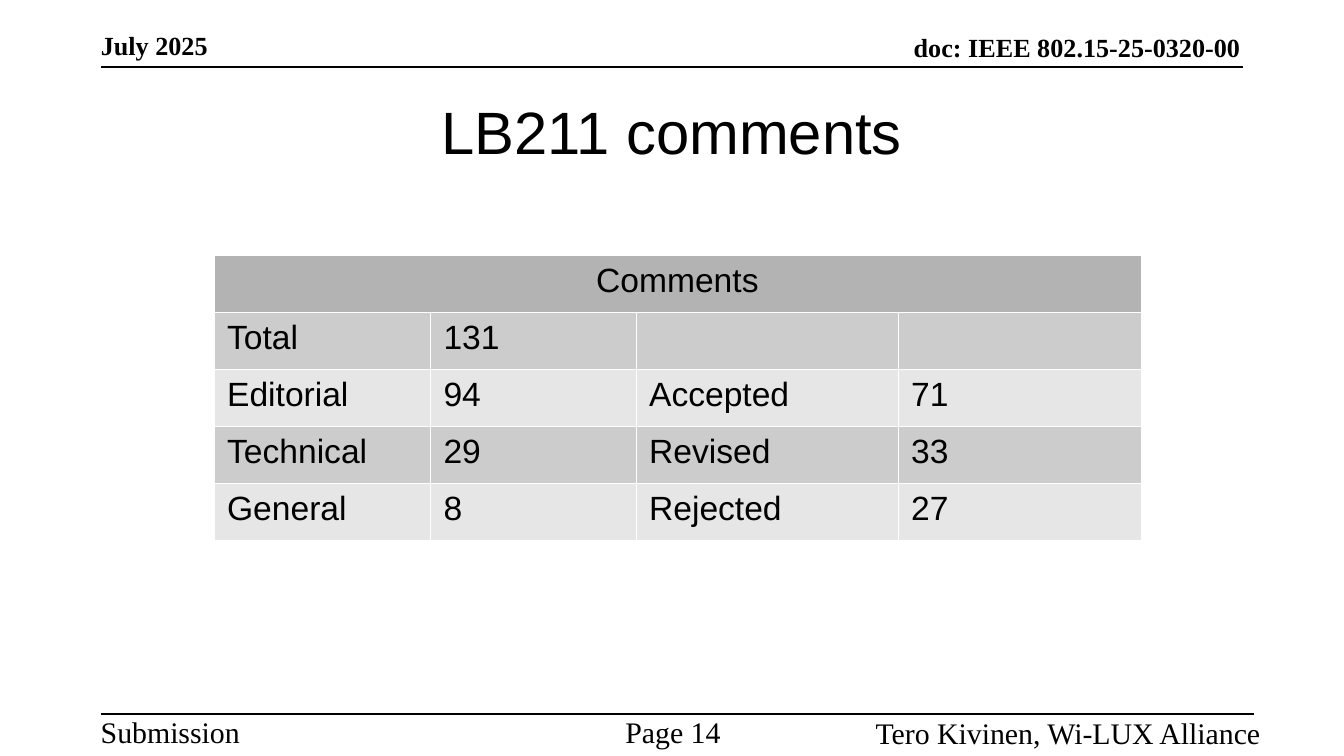
from lxml import etree
from pptx import Presentation
from pptx.dml.color import RGBColor
from pptx.enum.shapes import MSO_CONNECTOR
from pptx.enum.text import MSO_ANCHOR, PP_ALIGN
from pptx.oxml.ns import qn
from pptx.util import Inches, Pt

LEFT, CENTER, RIGHT = PP_ALIGN.LEFT, PP_ALIGN.CENTER, PP_ALIGN.RIGHT
TOP, MIDDLE, BOTTOM = MSO_ANCHOR.TOP, MSO_ANCHOR.MIDDLE, MSO_ANCHOR.BOTTOM
STRAIGHT = MSO_CONNECTOR.STRAIGHT

WIDTH = 10
HEIGHT = WIDTH * 9 / 16
MARGIN = 0.75
HEADER_RULE, FOOTER_RULE = 0.5, 5.31
SERIF, SANS = "Times New Roman", "Arial"
COLORS = {
    "ink": "000000",
    "grid": "FFFFFF",
    "heading": "B3B3B3",
    "odd": "CCCCCC",
    "even": "E6E6E6",
}

COLUMN_WIDTHS = [1.61, 1.53, 1.95, 1.81]
TABLE_HEIGHT = 2.12
COMMENT_ROWS = [
    ["Total", "131", "", ""],
    ["Editorial", "94", "Accepted", "71"],
    ["Technical", "29", "Revised", "33"],
    ["General", "8", "Rejected", "27"],
]


def color(name):
    return RGBColor.from_string(COLORS[name])


def write(frame, text, size, font, align=LEFT, bold=False):
    paragraph = frame.paragraphs[0]
    paragraph.alignment = align
    run = paragraph.add_run()
    run.text = text
    run.font.size = Pt(size)
    run.font.name = font
    run.font.bold = bold
    run.font.color.rgb = color("ink")


def fit_frame(frame, anchor):
    frame.word_wrap = True
    frame.vertical_anchor = anchor
    frame.margin_left = frame.margin_right = 0
    frame.margin_top = frame.margin_bottom = 0


def add_label(slide, text, box, size, align=LEFT, anchor=TOP, bold=False):
    label = slide.shapes.add_textbox(*map(Inches, box))
    fit_frame(label.text_frame, anchor)
    write(label.text_frame, text, size, SERIF, align, bold)


def add_rule(slide, y, right):
    rule = slide.shapes.add_connector(
        STRAIGHT, Inches(MARGIN), Inches(y), Inches(right), Inches(y))
    rule.line.color.rgb = color("ink")
    rule.line.width = Pt(1)
    etree.SubElement(rule._element.spPr, qn("a:effectLst"))


def add_title(slide, text):
    title = slide.shapes.title
    title.left, title.top = Inches(WIDTH * 0.05), Inches(HEADER_RULE)
    title.width, title.height = Inches(WIDTH * 0.9), Inches(0.94)
    fit_frame(title.text_frame, MIDDLE)
    write(title.text_frame, text, 32, SANS, CENTER)


def style_cell(cell, fill):
    # Borders come before the fill in the cell properties
    properties = cell._tc.get_or_add_tcPr()
    for side in ("a:lnL", "a:lnR", "a:lnT", "a:lnB"):
        border = etree.SubElement(properties, qn(side), w=str(Pt(0.06)))
        solid = etree.SubElement(border, qn("a:solidFill"))
        etree.SubElement(solid, qn("a:srgbClr"), val=COLORS["grid"])
    cell.fill.solid()
    cell.fill.fore_color.rgb = color(fill)


def add_comment_table(slide, left, top):
    row_count = len(COMMENT_ROWS) + 1
    table = slide.shapes.add_table(
        row_count, len(COLUMN_WIDTHS), Inches(left), Inches(top),
        Inches(sum(COLUMN_WIDTHS)), Inches(TABLE_HEIGHT)).table
    table.first_row = table.horz_banding = False
    for column, width in zip(table.columns, COLUMN_WIDTHS):
        column.width = Inches(width)

    # Heading across all columns
    heading = table.cell(0, 0)
    heading.merge(table.cell(0, len(COLUMN_WIDTHS) - 1))
    for cell in table.rows[0].cells:
        style_cell(cell, "heading")
    write(heading.text_frame, "Comments", 18, SANS, CENTER)

    # Counts in alternating greys
    for r, values in enumerate(COMMENT_ROWS, start=1):
        for c, value in enumerate(values):
            cell = table.cell(r, c)
            style_cell(cell, "odd" if r % 2 else "even")
            if value:
                write(cell.text_frame, value, 18, SANS)


def main():
    deck = Presentation()
    deck.slide_width, deck.slide_height = Inches(WIDTH), Inches(HEIGHT)
    slide = deck.slides.add_slide(deck.slide_layouts[5])

    # Header
    add_label(slide, "doc: IEEE 802.15-25-0320-00", (3.39, 0.32, 5.84, 0.15),
              14, RIGHT, BOTTOM, bold=True)
    add_label(slide, "July 2025", (MARGIN, 0.3, 2.79, 0.15),
              14, LEFT, BOTTOM, bold=True)
    add_rule(slide, HEADER_RULE, WIDTH - MARGIN)

    # Footer
    add_rule(slide, FOOTER_RULE, 9.33)
    add_label(slide, "Submission", (MARGIN, FOOTER_RULE, 1.87, 0.23), 16)
    add_label(slide, "Page 14 ", (4.1, FOOTER_RULE, 1.87, 0.23), 16, CENTER)
    add_label(slide, "Tero Kivinen, Wi-LUX Alliance",
              (5.71, 5.32, 3.67, 0.23), 16, RIGHT)

    # Content
    add_title(slide, "LB211 comments")
    add_comment_table(slide, 1.59, 1.9)

    deck.save("out.pptx")


if __name__ == "__main__":
    main()
